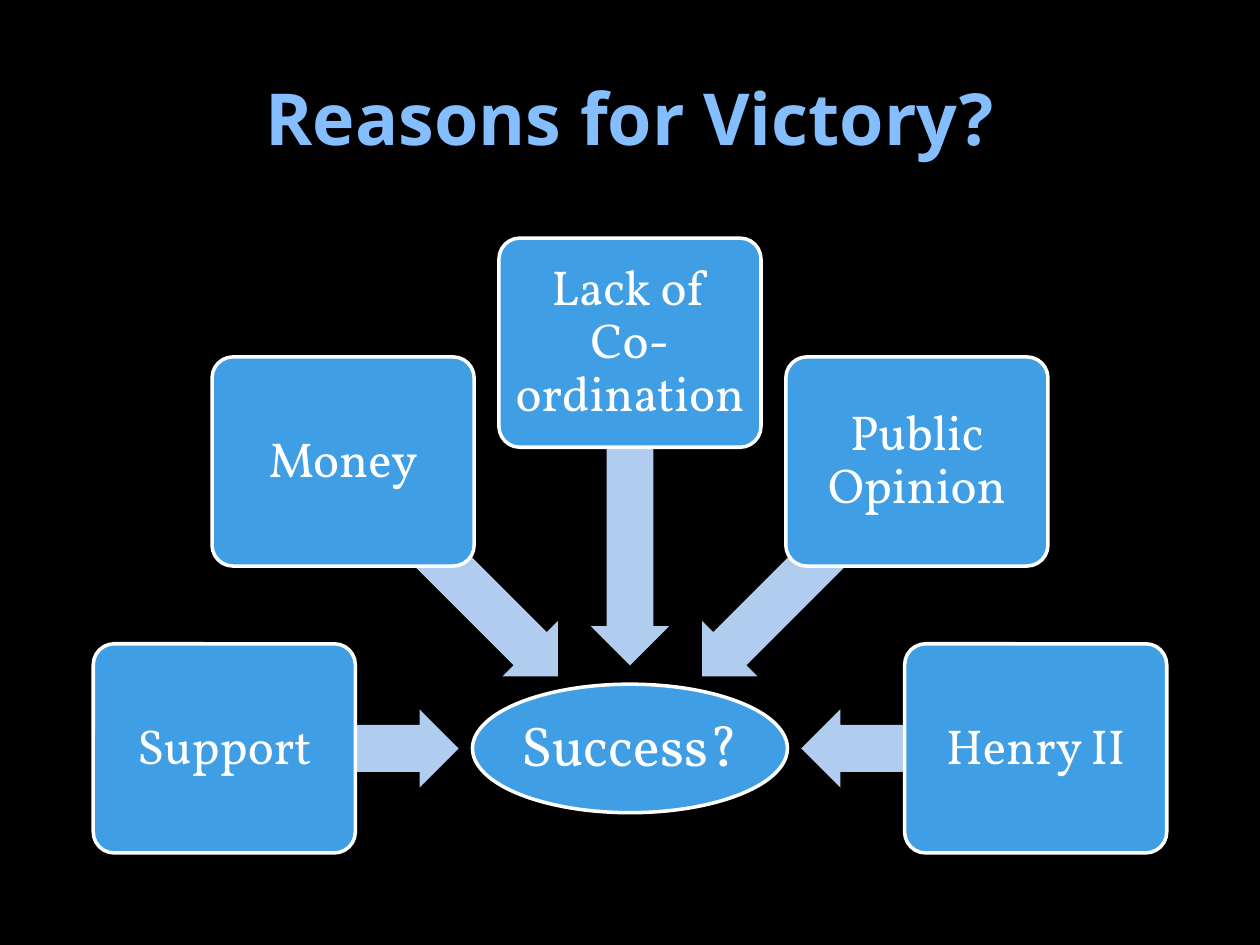
from math import cos, radians, sin

from pptx import Presentation
from pptx.dml.color import RGBColor
from pptx.enum.shapes import MSO_SHAPE as Kind
from pptx.enum.text import MSO_ANCHOR as Anchor, PP_ALIGN as Align
from pptx.util import Inches, Pt

BLACK = RGBColor(0x00, 0x00, 0x00)
WHITE = RGBColor(0xFF, 0xFF, 0xFF)
SKY = RGBColor(0x84, 0xBE, 0xFF)
BLUE = RGBColor(0x3F, 0x9E, 0xE4)
PALE = RGBColor(0xB0, 0xCC, 0xEF)

# Centre of the hub, and distance from it to each box centre
HUB = (5, 5.94)
REACH = 3.22

# Label, and gap between the hub centre and the arrow tip
REASONS = [
    ("Support", 1.36),
    ("Money", 0.81),
    ("Lack of Co-ordination", 0.66),
    ("Public Opinion", 0.81),
    ("Henry II", 1.36),
]


def polar(angle, dist):
    turn = radians(angle)
    return HUB[0] + dist * cos(turn), HUB[1] + dist * sin(turn)


class Board:
    head_font = "Open Sans"
    body_font = "Vollkorn"

    def __init__(self, deck):
        self.slide = deck.slides.add_slide(deck.slide_layouts[5])
        back = self.slide.background.fill
        back.solid()
        back.fore_color.rgb = BLACK

    def label(self, shape, text, size, name, color, bold=False):
        frame = shape.text_frame
        frame.text = text
        frame.word_wrap = True
        frame.vertical_anchor = Anchor.MIDDLE
        para = frame.paragraphs[0]
        para.alignment = Align.CENTER
        font = para.font
        font.size, font.name, font.bold = Pt(size), name, bold
        font.color.rgb = color
        return frame, para

    def title(self, text):
        head = self.slide.shapes.title
        head.left, head.top = Inches(0.5), Inches(0.3)
        head.width, head.height = Inches(9), Inches(1.25)
        self.label(head, text, 41, self.head_font, SKY, bold=True)

    def shape(self, kind, mid, width, height, color):
        x, y = mid
        shape = self.slide.shapes.add_shape(
            kind, Inches(x - width / 2), Inches(y - height / 2),
            Inches(width), Inches(height))
        shape.shadow.inherit = False
        shape.fill.solid()
        shape.fill.fore_color.rgb = color
        shape.line.fill.background()
        return shape

    def node(self, kind, mid, width, height, text, size, inset):
        node = self.shape(kind, mid, width, height, BLUE)
        node.line.color.rgb = WHITE
        node.line.width = Pt(2)
        frame, para = self.label(node, text, size, self.body_font, WHITE)
        frame.margin_left = frame.margin_right = Inches(inset)
        frame.margin_top = frame.margin_bottom = Inches(inset)
        para.line_spacing = 0.9
        return node

    def hub(self, text):
        self.node(Kind.OVAL, HUB, 2.5, 1.02, text, 32, 0.02)

    def box(self, angle, text):
        box = self.node(Kind.ROUNDED_RECTANGLE, polar(angle, REACH),
                        2.08, 1.66, text, 28, 0.06)
        box.adjustments[0] = 0.1

    def arrow(self, angle, gap):
        mid = polar(angle, (REACH + gap) / 2)
        arrow = self.shape(Kind.LEFT_ARROW, mid, REACH - gap, 0.62, PALE)
        arrow.adjustments[0] = 0.6
        arrow.adjustments[1] = 0.5
        arrow.rotation = angle % 360


def main():
    deck = Presentation()
    deck.slide_width, deck.slide_height = Inches(10), Inches(7.5)
    board = Board(deck)

    # Title and hub
    board.title("Reasons for Victory?")
    board.hub("Success?")

    # Reasons fan out over a half circle, each arrow tucked under its box
    step = 180 / (len(REASONS) - 1)
    for i, (text, gap) in enumerate(REASONS):
        angle = 180 + i * step
        board.arrow(angle, gap)
        board.box(angle, text)

    deck.save("out.pptx")


if __name__ == "__main__":
    main()
